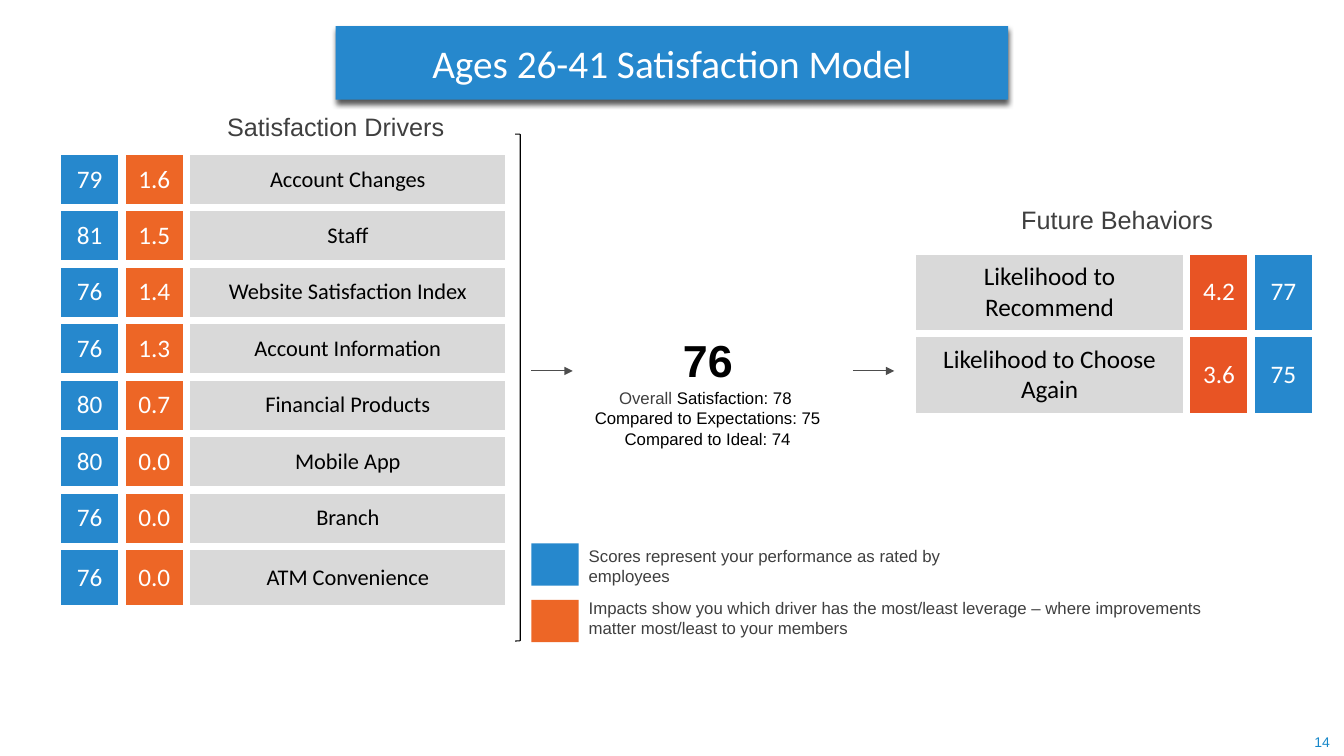
from lxml.etree import SubElement
from pptx import Presentation
from pptx.dml.color import RGBColor
from pptx.enum.shapes import MSO_CONNECTOR, MSO_SHAPE
from pptx.enum.text import MSO_ANCHOR, PP_ALIGN
from pptx.oxml import parse_xml
from pptx.oxml.ns import nsdecls, qn
from pptx.util import Pt

PX = 9144  # EMU in one px, 100 px to the inch
BLUE = RGBColor(0x26, 0x88, 0xCD)
ORANGE = RGBColor(0xED, 0x66, 0x26)
RED_ORANGE = RGBColor(0xE8, 0x54, 0x24)
PAGE_BLUE = RGBColor(0x16, 0x87, 0xC9)
LIGHT_GRAY = RGBColor(0xD9, 0xD9, 0xD9)
LINE_GRAY = RGBColor(0x4D, 0x4D, 0x4D)
TEXT_GRAY = RGBColor(0x3F, 0x3F, 0x3F)
BLACK = RGBColor(0, 0, 0)
WHITE = RGBColor(0xFF, 0xFF, 0xFF)

DRIVERS = [
    ("79", "1.6", "Account Changes"),
    ("81", "1.5", "Staff"),
    ("76", "1.4", "Website Satisfaction Index"),
    ("76", "1.3", "Account Information"),
    ("80", "0.7", "Financial Products"),
    ("80", "0.0", "Mobile App"),
    ("76", "0.0", "Branch"),
    ("76", "0.0", "ATM Convenience"),
]
BEHAVIORS = [
    ("Likelihood to Recommend", "4.2", "77"),
    ("Likelihood to Choose Again", "3.6", "75"),
]
LEGEND = [
    (BLUE, 539, 539, 425, 44, 0, "Scores represent your performance as rated by employees"),
    (ORANGE, 595, 589, 640, 47, 6, "Impacts show you which driver has the most/least leverage – "
     "where improvements matter most/least to your members"),
]


def write(frame, *lines, size=12, color=TEXT_GRAY, font="Arial", bold=False,
          align=PP_ALIGN.CENTER, before=0):
    """Write one paragraph a line; a line is a string or a list of (text, color)."""
    for index, line in enumerate(lines):
        paragraph = frame.add_paragraph() if index else frame.paragraphs[0]
        paragraph.alignment = align
        paragraph.space_before = Pt(before)
        runs = [(line, color)] if isinstance(line, str) else line
        for text, run_color in runs:
            run = paragraph.add_run()
            run.text = text
            run.font.name = font
            run.font.size = Pt(size)
            run.font.bold = bold
            run.font.color.rgb = run_color


class Board:
    """Draws on one slide in a shared style."""

    def __init__(self, slide, body_font="Calibri", line_width=0.75, border_width=6):
        self.shapes = slide.shapes
        self.body_font = body_font
        self.line_width = Pt(line_width)
        self.border_width = Pt(border_width)

    def text(self, left, top, width, height, *lines, anchor=MSO_ANCHOR.TOP,
             margin=None, **style):
        shape = self.shapes.add_textbox(left * PX, top * PX, width * PX, height * PX)
        frame = shape.text_frame
        frame.word_wrap = True
        frame.vertical_anchor = anchor
        if margin is not None:
            frame.margin_left = frame.margin_right = margin * PX
            frame.margin_top = frame.margin_bottom = margin * PX
        write(frame, *lines, **style)

    def shape(self, kind, left, top, width, height, fill=None, line=None):
        shape = self.shapes.add_shape(kind, left * PX, top * PX, width * PX, height * PX)
        shape.shadow.inherit = False
        if fill is None:
            shape.fill.background()
        else:
            shape.fill.solid()
            shape.fill.fore_color.rgb = fill
        if line is None:
            shape.line.fill.background()
        else:
            shape.line.color.rgb = line
            shape.line.width = self.line_width
        return shape

    def banner(self, left, top, width, height, title):
        shape = self.shape(MSO_SHAPE.RECTANGLE, left, top, width, height, BLUE)
        shape.text_frame.vertical_anchor = MSO_ANCHOR.MIDDLE
        write(shape.text_frame, title, size=28, color=WHITE, font=self.body_font)
        effects = shape._element.spPr.find(qn("a:effectLst"))
        effects.append(parse_xml(
            f'<a:outerShdw {nsdecls("a")} blurRad="{Pt(4)}" dist="{Pt(3)}" dir="5400000" '
            'rotWithShape="0"><a:srgbClr val="000000"><a:alpha val="65000"/></a:srgbClr>'
            '</a:outerShdw>'))

    def arrow(self, left, top, length):
        arrow = self.shapes.add_connector(
            MSO_CONNECTOR.STRAIGHT, left * PX, top * PX, (left + length) * PX, top * PX)
        arrow.line.color.rgb = LINE_GRAY
        arrow.line.width = self.line_width
        SubElement(arrow.line._get_or_add_ln(), qn("a:tailEnd"), type="triangle")
        SubElement(arrow._element.spPr, qn("a:effectLst"))

    def table(self, left, top, widths, heights, rows, formats):
        """Fill a table; formats gives (fill, text color, size) for each column."""
        table = self.shapes.add_table(
            len(rows), len(widths), left * PX, top * PX,
            sum(widths) * PX, sum(heights) * PX).table
        table.first_row = table.horz_banding = False
        for column, width in zip(table.columns, widths):
            column.width = width * PX
        for row, height, values in zip(table.rows, heights, rows):
            row.height = height * PX
            for cell, value, (fill, color, size) in zip(row.cells, values, formats):
                self.border(cell)
                cell.fill.solid()
                cell.fill.fore_color.rgb = fill
                cell.vertical_anchor = MSO_ANCHOR.MIDDLE
                write(cell.text_frame, value, size=size, color=color, font=self.body_font)

    def border(self, cell):
        properties = cell._tc.get_or_add_tcPr()
        for side in ("lnL", "lnR", "lnT", "lnB"):
            properties.append(parse_xml(
                f'<a:{side} {nsdecls("a")} w="{self.border_width}"><a:solidFill>'
                f'<a:srgbClr val="{WHITE}"/></a:solidFill></a:{side}>'))


def main():
    presentation = Presentation()
    presentation.slide_width = 1333 * PX
    presentation.slide_height = 750 * PX
    board = Board(presentation.slides.add_slide(presentation.slide_layouts[6]))

    # Page number and title
    board.text(1259, 728, 60, 17, "14", size=10, color=PAGE_BLUE,
               align=PP_ALIGN.RIGHT, margin=0)
    board.banner(333, 26, 667, 73, "Ages 26-41 Satisfaction Model")

    # Satisfaction drivers
    board.text(113, 106, 440, 40, "Satisfaction Drivers", size=18)
    board.table(57, 150, [64, 64, 320], [56] * 7 + [62], DRIVERS,
                [(BLUE, WHITE, 18), (ORANGE, WHITE, 18), (LIGHT_GRAY, BLACK, 16)])
    board.shape(MSO_SHAPE.RIGHT_BRACKET, 511, 133, 5, 503, line=BLACK)

    # Overall score between two arrows
    for left in (527, 846):
        board.arrow(left, 368, 41)
    board.text(576, 326, 252, 61, "76", size=32, color=BLACK, bold=True,
               anchor=MSO_ANCHOR.MIDDLE)
    board.text(576, 380, 252, 71,
               [("Overall ", TEXT_GRAY), ("Satisfaction: 78 ", BLACK)],
               "Compared to Expectations: 75", "Compared to Ideal: 74", color=BLACK)

    # Future behaviors
    board.text(888, 198, 440, 40, "Future Behaviors", size=18)
    board.table(905, 249, [272, 64, 64], [82, 82], BEHAVIORS,
                [(LIGHT_GRAY, BLACK, 18), (RED_ORANGE, WHITE, 18), (BLUE, WHITE, 18)])

    # Legend
    for color, swatch_top, text_top, width, height, before, text in LEGEND:
        swatch = board.shape(MSO_SHAPE.ROUNDED_RECTANGLE, 527, swatch_top, 47, 42, color)
        swatch.adjustments[0] = 0
        board.text(574, text_top, width, height, text, anchor=MSO_ANCHOR.MIDDLE,
                   align=PP_ALIGN.LEFT, before=before)

    presentation.save("out.pptx")


if __name__ == "__main__":
    main()
